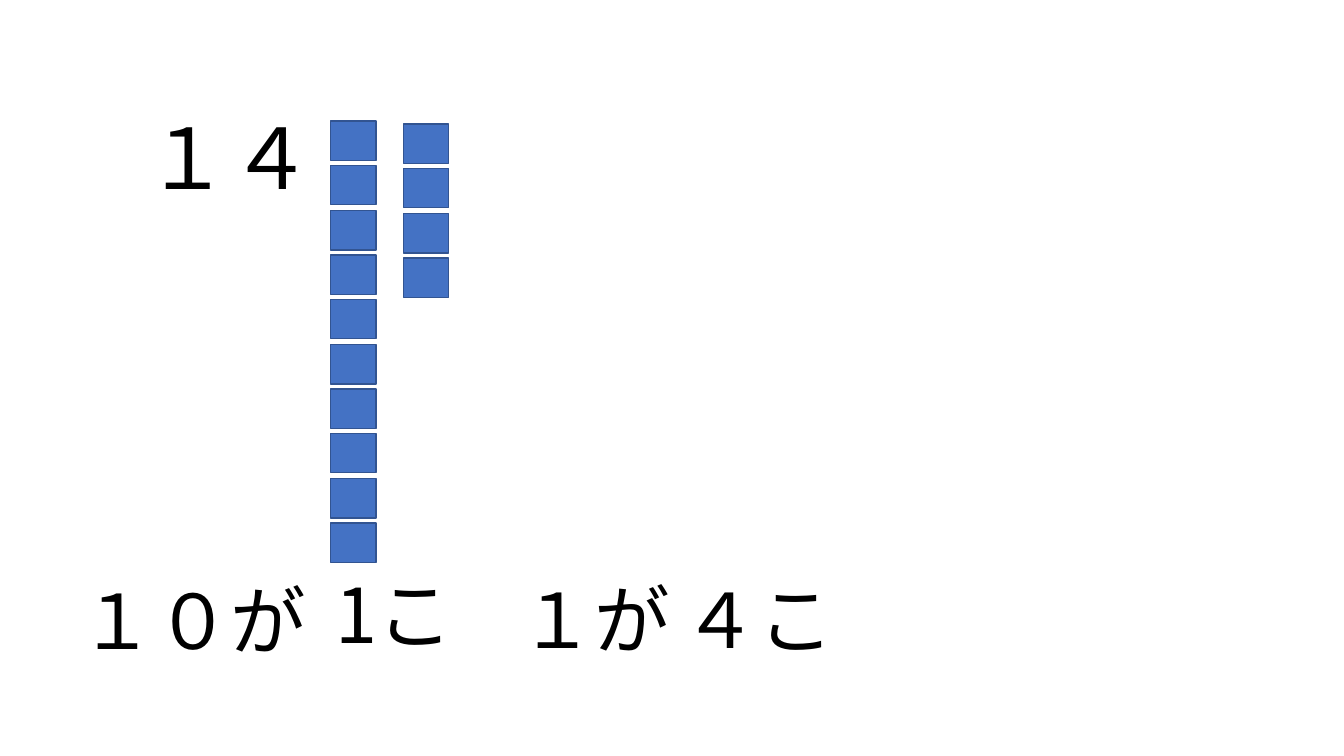
from lxml.etree import SubElement
from pptx import Presentation
from pptx.dml.color import RGBColor
from pptx.enum.shapes import MSO_SHAPE
from pptx.enum.text import MSO_AUTO_SIZE
from pptx.oxml.ns import qn
from pptx.util import Pt

EMU_PER_PX = 9144
COLOURS = {"block": "4472C4", "edge": "325491", "ink": "000000"}
TYPEFACE = "Noto Sans CJK JP"
BLOCK_WIDTH, BLOCK_HEIGHT = 45, 39
TEN_BLOCK_SPAN = 399

NUMBER_LABELS = [
    ("１４", 134, 100, 287, 111, 60),
    ("１０が", 69, 564, 310, 101, 54),
    ("1こ", 323, 558, 155, 101, 54),
    ("１が", 505, 563, 188, 101, 54),
    ("４こ", 667, 563, 228, 101, 54),
]
BLOCK_COLUMNS = [(400, 123, 4), (328, 120, 10)]


def px(*lengths):
    """Turn pixel lengths into EMU."""
    return [length * EMU_PER_PX for length in lengths]


def colour(role):
    """Return the colour used for a role."""
    return RGBColor.from_string(COLOURS[role])


def apply_format(target, values):
    """Set each attribute of the target from a dict."""
    for attribute, value in values.items():
        setattr(target, attribute, value)


def add_number_label(slide, wording, left, top, width, height, size):
    """Add one line of large number text."""
    label = slide.shapes.add_textbox(*px(left, top, width, height))
    apply_format(label.text_frame, {
        "text": wording,
        "word_wrap": True,
        "auto_size": MSO_AUTO_SIZE.SHAPE_TO_FIT_TEXT,
    })
    wording_run = label.text_frame.paragraphs[0].runs[0]
    apply_format(wording_run.font, {"size": Pt(size), "name": TYPEFACE})
    wording_run.font.color.rgb = colour("ink")
    east_asian = SubElement(wording_run.font._element, qn("a:ea"))
    east_asian.set("typeface", TYPEFACE)


def add_block_column(slide, left, top, count):
    """Add a grouped column of equally spaced counting blocks."""
    column = slide.shapes.add_group_shape()
    for position in range(count):
        block_top = top + round(position * TEN_BLOCK_SPAN / 9)
        block = column.shapes.add_shape(
            MSO_SHAPE.RECTANGLE, *px(left, block_top, BLOCK_WIDTH, BLOCK_HEIGHT))
        block.shadow.inherit = False
        block.fill.solid()
        block.fill.fore_color.rgb = colour("block")
        block.line.color.rgb = colour("edge")
        block.line.width = Pt(1)


def main():
    """Build the slide that splits fourteen into a ten and four ones."""
    deck = Presentation()
    slide_width, slide_height = px(1333, 750)
    apply_format(deck, {"slide_width": slide_width, "slide_height": slide_height})
    slide = deck.slides.add_slide(deck.slide_layouts[6])
    for column in BLOCK_COLUMNS:
        add_block_column(slide, *column)
    for label in NUMBER_LABELS:
        add_number_label(slide, *label)
    deck.save("out.pptx")


if __name__ == "__main__":
    main()
